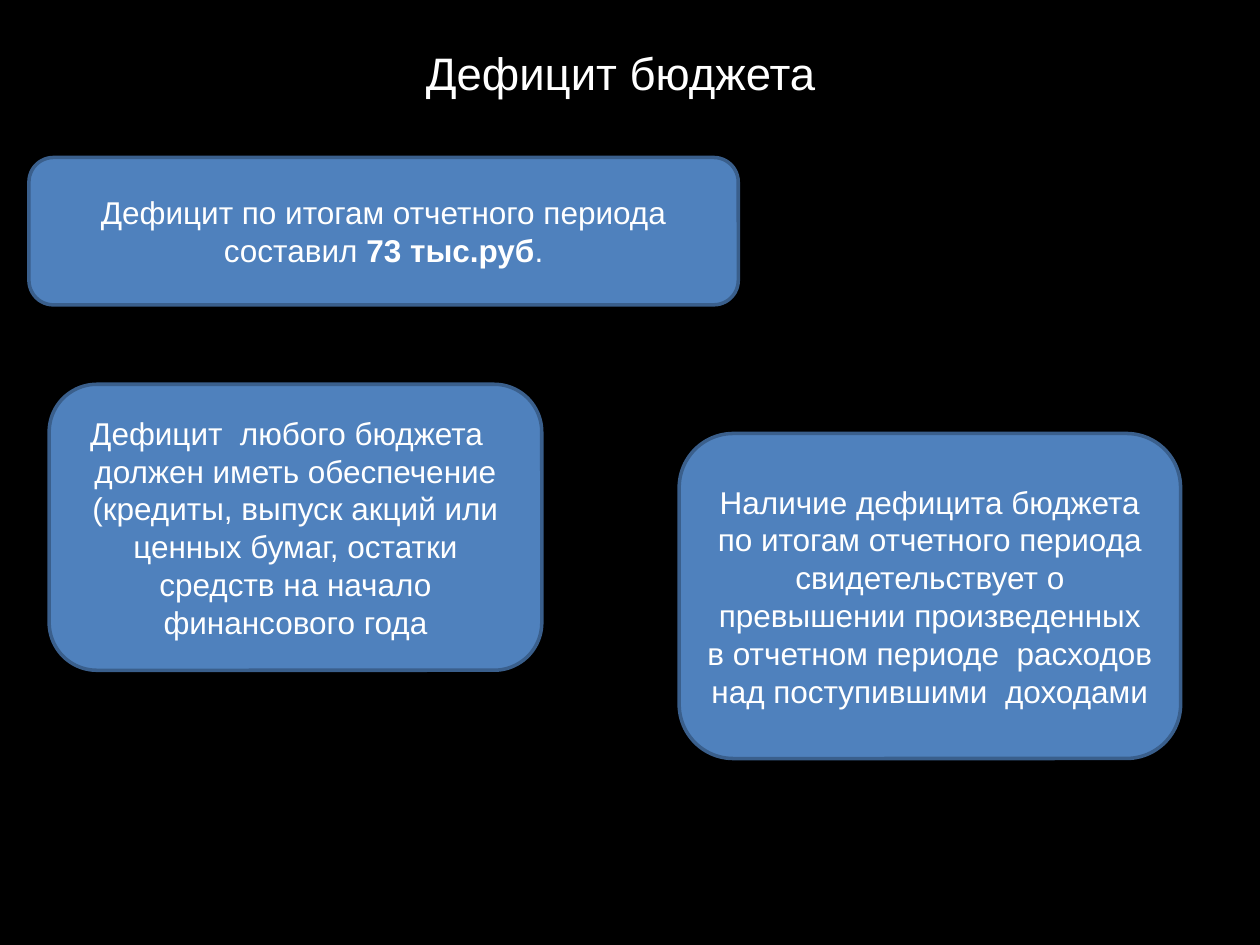
from dataclasses import dataclass

from pptx import Presentation
from pptx.dml.color import RGBColor
from pptx.enum.shapes import MSO_SHAPE
from pptx.enum.text import MSO_ANCHOR, PP_ALIGN
from pptx.slide import Slide
from pptx.text.text import _Paragraph as Paragraph
from pptx.util import Inches, Pt

COLORS = {"background": "000000", "box": "4F81BD", "border": "3A5F8C", "text": "FFFFFF"}
FONT = "Arial"


@dataclass
class TextBlock:
    left: float
    top: float
    width: float
    height: float
    text: str
    bold_text: str = ""
    ending: str = ""


BLOCKS = [
    TextBlock(0.23, 1.25, 5.63, 1.17,
              "Дефицит по итогам отчетного периода составил ", "73 тыс.руб", "."),
    TextBlock(5.39, 3.44, 3.98, 2.58,
              "Наличие дефицита бюджета по итогам отчетного периода свидетельствует о "
              "превышении произведенных в отчетном периоде  расходов над поступившими  доходами"),
    TextBlock(0.39, 3.05, 3.91, 2.27,
              "Дефицит  любого бюджета   должен иметь обеспечение (кредиты, выпуск акций или "
              "ценных бумаг, остатки средств на начало финансового года"),
]


def color(name: str) -> RGBColor:
    return RGBColor.from_string(COLORS[name])


def format_paragraph(paragraph: Paragraph, size: int, alignment: PP_ALIGN) -> None:
    paragraph.alignment = alignment
    paragraph.font.name = FONT
    paragraph.font.size = Pt(size)
    paragraph.font.color.rgb = color("text")


def add_title(slide: Slide, text: str) -> None:
    title = slide.shapes.title
    title.left, title.top = Inches(3.28), Inches(0.31)
    title.width, title.height = Inches(3.91), Inches(0.54)
    frame = title.text_frame
    frame.text = text
    frame.vertical_anchor = MSO_ANCHOR.TOP
    format_paragraph(frame.paragraphs[0], 26, PP_ALIGN.LEFT)


def add_block(slide: Slide, block: TextBlock) -> None:
    shape = slide.shapes.add_shape(
        MSO_SHAPE.ROUNDED_RECTANGLE, Inches(block.left), Inches(block.top),
        Inches(block.width), Inches(block.height))
    shape.shadow.inherit = False
    shape.fill.solid()
    shape.fill.fore_color.rgb = color("box")
    shape.line.color.rgb = color("border")
    shape.line.width = Pt(2)

    frame = shape.text_frame
    frame.word_wrap = True
    frame.vertical_anchor = MSO_ANCHOR.MIDDLE
    paragraph = frame.paragraphs[0]
    format_paragraph(paragraph, 18, PP_ALIGN.CENTER)
    for text in filter(None, (block.text, block.bold_text, block.ending)):
        run = paragraph.add_run()
        run.text = text
        run.font.bold = text == block.bold_text


def main() -> None:
    presentation = Presentation()
    presentation.slide_width, presentation.slide_height = Inches(10), Inches(7.5)
    slide = presentation.slides.add_slide(presentation.slide_layouts[5])

    # Black background
    slide.background.fill.solid()
    slide.background.fill.fore_color.rgb = color("background")

    # Heading and the three statements
    add_title(slide, "Дефицит бюджета")
    for block in BLOCKS:
        add_block(slide, block)

    presentation.save("out.pptx")


if __name__ == "__main__":
    main()
